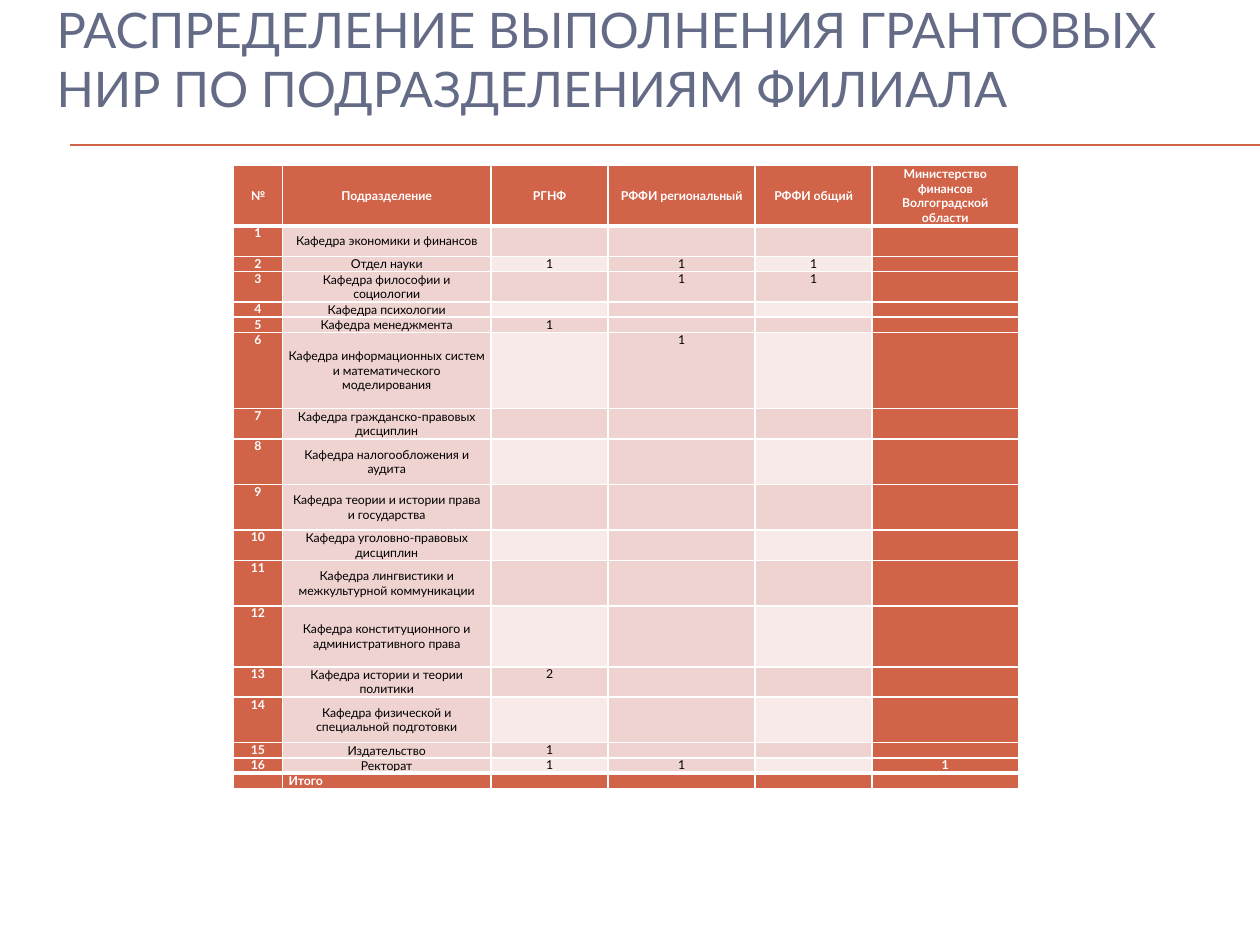
"""Build the slide with the table of grant research by department."""
from lxml import etree
from pptx import Presentation
from pptx import util as u
from pptx.dml.color import RGBColor
from pptx.enum import shapes, text
from pptx.oxml.ns import qn

FONT = "Lato"
RUST, ROSE, PALE = "D16349", "EED3D0", "F7EAE9"
WHITE, BLACK, SLATE = "FFFFFF", "000000", "646B86"

TITLE = "РАСПРЕДЕЛЕНИЕ ВЫПОЛНЕНИЯ ГРАНТОВЫХ НИР ПО ПОДРАЗДЕЛЕНИЯМ ФИЛИАЛА"
HEADER = ["№", "Подразделение", "РГНФ", "РФФИ региональный", "РФФИ общий",
          "Министерство финансов Волгоградской области"]
DEPARTMENTS = [
    ("Кафедра экономики и финансов", 2, {}),
    ("Отдел науки", 1, {2: 1, 3: 1, 4: 1}),
    ("Кафедра философии и социологии", 2, {3: 1, 4: 1}),
    ("Кафедра психологии", 1, {}),
    ("Кафедра менеджмента", 1, {2: 1}),
    ("Кафедра информационных систем и математического моделирования", 5, {3: 1}),
    ("Кафедра гражданско-правовых дисциплин", 2, {}),
    ("Кафедра налогообложения и аудита", 3, {}),
    ("Кафедра теории и истории права и государства", 3, {}),
    ("Кафедра уголовно-правовых дисциплин", 2, {}),
    ("Кафедра лингвистики и межкультурной коммуникации", 3, {}),
    ("Кафедра конституционного и административного права", 4, {}),
    ("Кафедра истории и теории политики", 2, {2: 2}),
    ("Кафедра физической и специальной подготовки", 3, {}),
    ("Издательство", 1, {2: 1}),
    ("Ректорат", 1, {2: 1, 3: 1, 5: 1}),
]
TOTAL = ["", "Итого", "", "", "", ""]
COLUMN_WIDTHS = [0.98, 4.21, 2.36, 2.96, 2.36, 2.95]
TABLE_LEFT, TABLE_TOP, TABLE_HEIGHT = 4.71, 3.33, 12.57
RULE_LEFT, RULE_RIGHT, RULE_TOPS = 1.42, 25.4, (2.92, 2.94)


def color(value):
    return RGBColor.from_string(value)


def style_span(span, size, value, bold=False):
    span.font.name = FONT
    span.font.size = u.Pt(size)
    span.font.bold = bold
    span.font.color.rgb = color(value)


def add_title(page):
    box = page.shapes.add_textbox(u.Cm(0.89), u.Cm(0), u.Cm(24.13), u.Cm(2.34))
    frame = box.text_frame
    frame.word_wrap = True
    frame.vertical_anchor = text.MSO_ANCHOR.MIDDLE
    frame.text = TITLE
    style_span(frame.paragraphs[0].runs[0], 28, SLATE)


def add_rules(page):
    for top in RULE_TOPS:
        rule = page.shapes.add_connector(shapes.MSO_CONNECTOR.STRAIGHT, u.Cm(RULE_LEFT),
                                         u.Cm(top), u.Cm(RULE_RIGHT), u.Cm(top))
        rule.line.color.rgb = color(RUST)
        rule.line.width = u.Pt(0.75)
        etree.SubElement(rule._element.spPr, qn("a:effectLst"))


def add_borders(cell, top, bottom):
    properties = cell._tc.get_or_add_tcPr()
    sides = [("lnL", 1), ("lnR", 1), ("lnT", top), ("lnB", bottom)]
    for index, (side, points) in enumerate(sides):
        line = etree.Element(qn(f"a:{side}"), w=str(u.Pt(points)))
        fill = etree.SubElement(line, qn("a:solidFill"))
        etree.SubElement(fill, qn("a:srgbClr"), val=WHITE)
        properties.insert(index, line)


def fill_for(row, column, last):
    if row in (0, last) or column in (0, 5):
        return RUST
    return PALE if row % 2 == 0 and column in (2, 4) else ROSE


def style_cell(cell, wording, row, column, last):
    background = fill_for(row, column, last)
    cell.fill.solid()
    cell.fill.fore_color.rgb = color(background)
    cell.margin_left = cell.margin_right = u.Cm(0.13)
    cell.margin_top = cell.margin_bottom = 0
    middle = row == 0 or (column == 1 and row != last)
    cell.vertical_anchor = text.MSO_ANCHOR.MIDDLE if middle else text.MSO_ANCHOR.TOP
    add_borders(cell, 3 if row in (1, last) else 1, 3 if row in (0, last - 1) else 1)
    para = cell.text_frame.paragraphs[0]
    para.alignment = text.PP_ALIGN.JUSTIFY if row == last else text.PP_ALIGN.CENTER
    if wording:
        para.text = wording
        strong = background == RUST
        style_span(para.runs[0], 7, WHITE if strong else BLACK, strong)
    else:
        etree.SubElement(para._p, qn("a:endParaRPr"), sz="700")


def add_grants_table(page):
    rows, line_counts = [HEADER], [4]
    for number, (name, lines, grants) in enumerate(DEPARTMENTS, 1):
        rows.append([str(number), name] + [str(grants.get(c, "")) for c in range(2, 6)])
        line_counts.append(lines)
    rows.append(TOTAL)
    line_counts.append(1)
    frame = page.shapes.add_table(len(rows), len(HEADER), u.Cm(TABLE_LEFT), u.Cm(TABLE_TOP),
                                  u.Cm(sum(COLUMN_WIDTHS)), u.Cm(TABLE_HEIGHT))
    table = frame.table
    table.horz_banding = False
    for column, width in zip(table.columns, COLUMN_WIDTHS):
        column.width = u.Cm(width)
    for row, lines in zip(table.rows, line_counts):
        row.height = u.Cm(TABLE_HEIGHT * lines / sum(line_counts))
    for row, wordings in enumerate(rows):
        for column, wording in enumerate(wordings):
            style_cell(table.cell(row, column), wording, row, column, len(rows) - 1)


def main():
    deck = Presentation()
    deck.slide_width, deck.slide_height = u.Cm(25.4), u.Cm(19.05)
    page = deck.slides.add_slide(deck.slide_layouts[6])
    add_rules(page)
    add_title(page)
    add_grants_table(page)
    deck.save("out.pptx")


if __name__ == "__main__":
    main()
